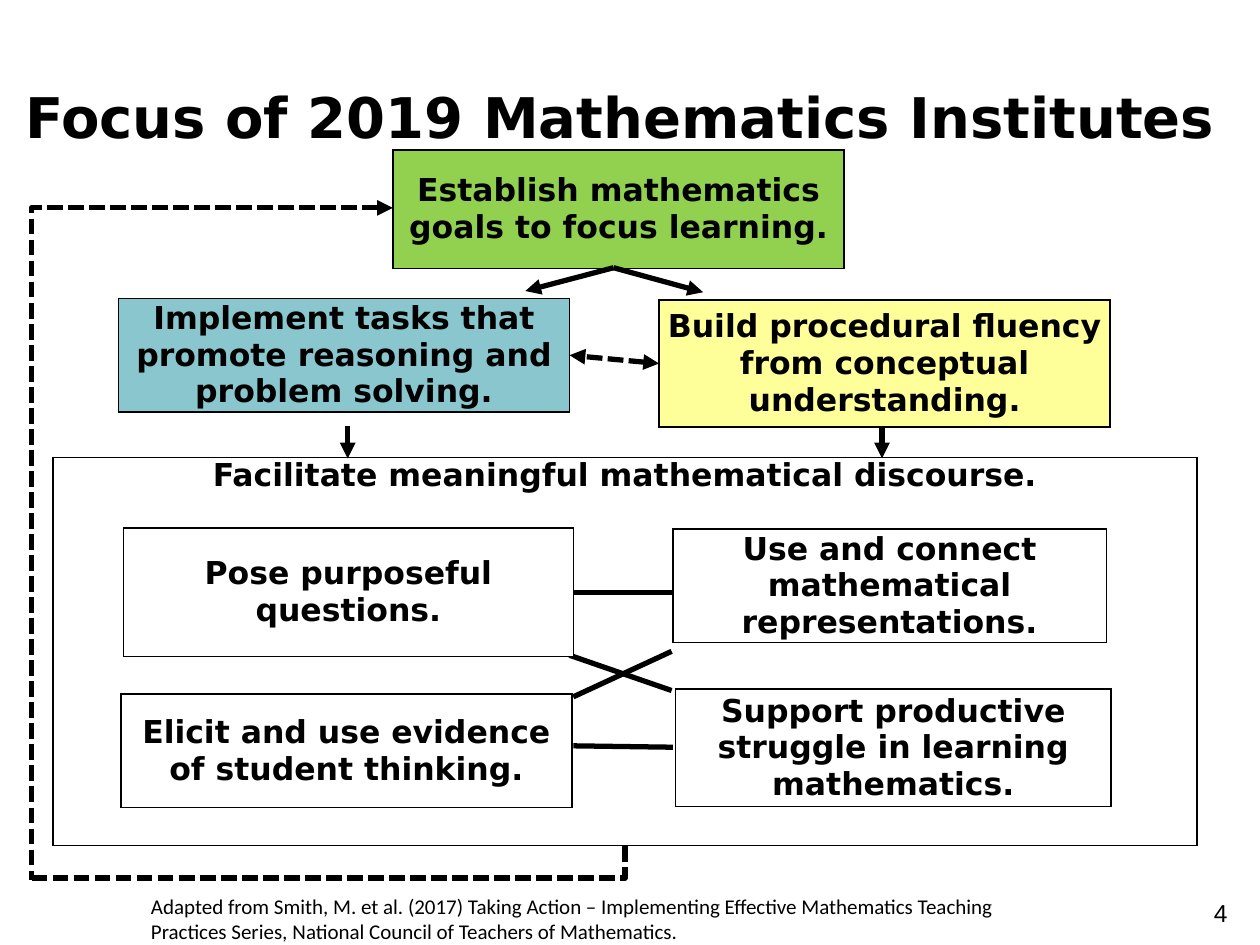
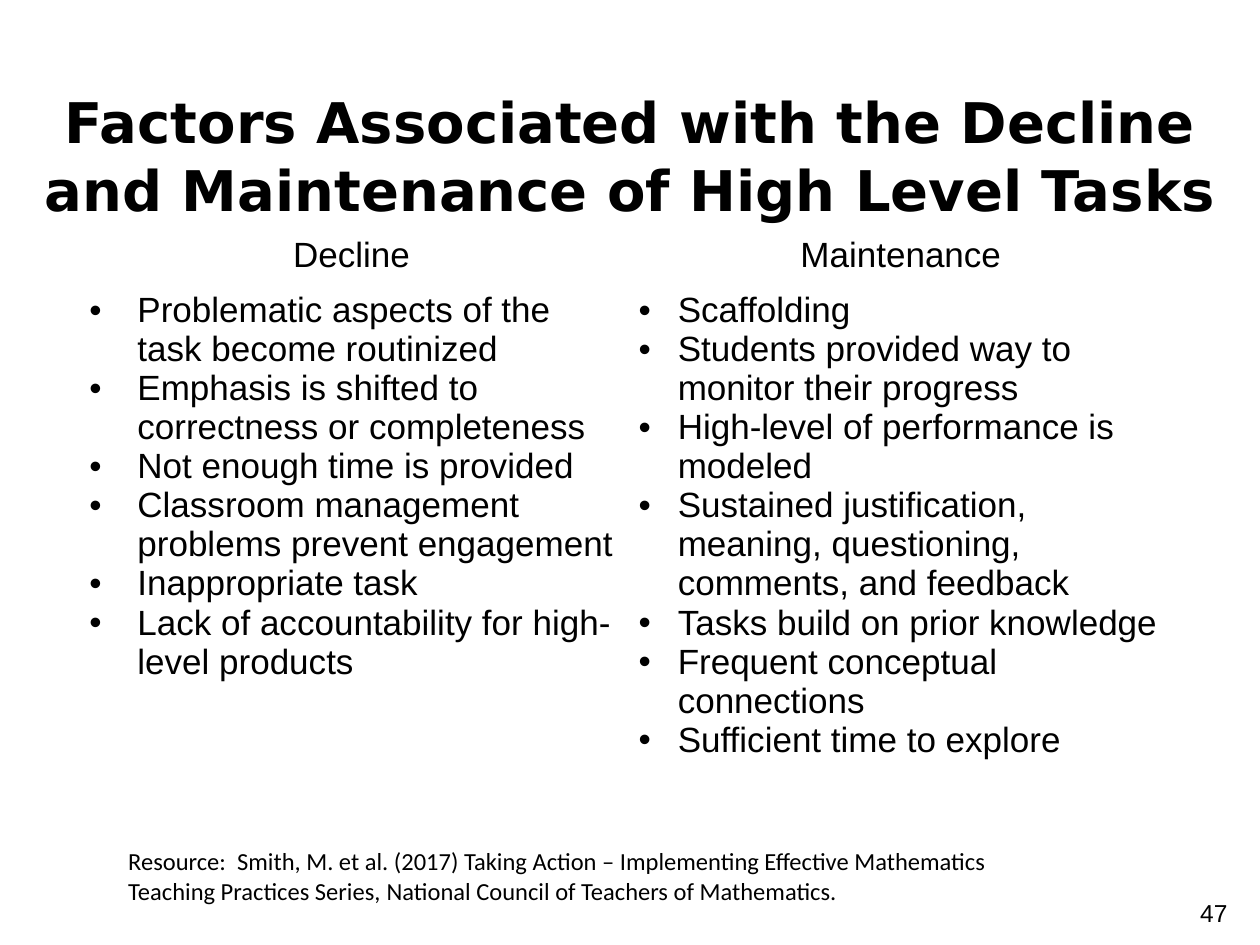
from lxml import etree
from pptx import Presentation
from pptx.dml.color import RGBColor
from pptx.enum.dml import MSO_LINE
from pptx.enum.shapes import MSO_CONNECTOR
from pptx.enum.text import MSO_ANCHOR, PP_ALIGN
from pptx.oxml.ns import qn
from pptx.util import Pt

STRAIGHT, ELBOW = MSO_CONNECTOR.STRAIGHT, MSO_CONNECTOR.ELBOW
LEFT, CENTER, RIGHT = PP_ALIGN.LEFT, PP_ALIGN.CENTER, PP_ALIGN.RIGHT
TOP, MIDDLE = MSO_ANCHOR.TOP, MSO_ANCHOR.MIDDLE
DASH = MSO_LINE.SQUARE_DOT

COLORS = {"ink": "000000", "goals": "92D050", "tasks": "8AC6CD",
          "fluency": "FFFF99", "practice": "FFFFFF"}
HEAD_FONT, BODY_FONT, NOTE_FONT = "DejaVu Sans", "Arial", "Calibri"
CITATION = ("Smith, M. et al. (2017) Taking Action – Implementing Effective "
            "Mathematics Teaching Practices Series", ", ",
            "National Council of Teachers of Mathematics.")


def rgb(name):
    return RGBColor.from_string(COLORS[name])


class SlideBuilder:
    """Holds the shared style and the slide being built."""

    def __init__(self):
        self.deck = Presentation()
        self.deck.slide_width, self.deck.slide_height = Pt(720), Pt(540)
        self.page = None

    def new_page(self, title, title_area, number):
        self.page = self.deck.slides.add_slide(self.deck.slide_layouts[6])
        self.text(title_area, [title], 32, HEAD_FONT, CENTER, MIDDLE, bold=True)
        self.text((540.5, 509.8, 168, 37.4), [number], 14, BODY_FONT, RIGHT)

    def format_para(self, para, size, font, align, bold=False):
        para.alignment = align
        for span in para.runs:
            span.font.size, span.font.name, span.font.bold = Pt(size), font, bold
            span.font.color.rgb = rgb("ink")

    def text(self, area, spans, size, font, align=LEFT, anchor=TOP, bold=False):
        box = self.page.shapes.add_textbox(*map(Pt, area))
        frame = box.text_frame
        frame.word_wrap, frame.vertical_anchor = True, anchor
        para = frame.paragraphs[0]
        for words in spans:
            para.add_run().text = words
        self.format_para(para, size, font, align, bold)
        return para

    def source_note(self, area, opening, size):
        para = self.text(area, [opening, *CITATION], size, NOTE_FONT)
        para.runs[2].font.italic = True

    def table(self, area, rows, columns):
        frame = self.page.shapes.add_table(rows, columns, *map(Pt, area))
        frame.table.first_row = frame.table.horz_banding = False
        return frame

    def style_cell(self, cell, fill=None, border=False):
        properties = cell._tc.get_or_add_tcPr()
        for side in ("lnL", "lnR", "lnT", "lnB"):
            edge = etree.SubElement(properties, qn("a:" + side), w=str(Pt(1)))
            if border:
                paint = etree.SubElement(edge, qn("a:solidFill"))
                etree.SubElement(paint, qn("a:srgbClr"), val=COLORS["ink"])
            else:
                etree.SubElement(edge, qn("a:noFill"))
        if fill:
            cell.fill.solid()
            cell.fill.fore_color.rgb = rgb(fill)
        else:
            cell.fill.background()

    def practice_box(self, area, words, fill=None, anchor=MIDDLE):
        frame = self.table(area, 1, 1)
        cell = frame.table.cell(0, 0)
        self.style_cell(cell, fill, border=True)
        cell.margin_left = cell.margin_right = Pt(4.5)
        cell.margin_top = cell.margin_bottom = 0
        cell.vertical_anchor = anchor
        cell.text_frame.text = words
        self.format_para(cell.text_frame.paragraphs[0], 18, HEAD_FONT, CENTER, True)
        return frame

    def line(self, start, end, kind=STRAIGHT, dashed=False, heads=()):
        link = self.page.shapes.add_connector(kind, *map(Pt, (*start, *end)))
        link.line.width = Pt(3)
        link.line.color.rgb = rgb("ink")
        if dashed:
            link.line.dash_style = DASH
        properties = link._element.spPr
        for head in heads:
            etree.SubElement(properties.find(qn("a:ln")), qn("a:" + head),
                             type="triangle")
        if kind == ELBOW:  # one corner: across first, then up or down
            properties.find(qn("a:prstGeom")).set("prst", "bentConnector2")
        etree.SubElement(properties, qn("a:effectLst"))
        return link

    def list_cell(self, cell, items, indent):
        self.style_cell(cell)
        frame = cell.text_frame
        frame.text = "\n".join(items)
        for para in frame.paragraphs:
            properties = para._p.get_or_add_pPr()
            properties.set("marL", str(Pt(indent)))
            properties.set("indent", str(-Pt(indent)))
            etree.SubElement(properties, qn("a:buFont"), typeface=BODY_FONT)
            etree.SubElement(properties, qn("a:buChar"), char="•")
            self.format_para(para, 20, BODY_FONT, LEFT)


def build_focus(builder):
    builder.new_page("Focus of 2019 Mathematics Institutes", (0, 36, 709, 61), "4")
    builder.source_note((79.2, 506.9, 540, 36), "Adapted from ", 12)

    # Goals, tasks and fluency
    builder.practice_box((224.6, 85.7, 257.8, 67.7),
                         "Establish mathematics goals to focus learning.", "goals")
    tasks = builder.practice_box(
        (67.7, 170.6, 257.8, 64.8),
        "Implement tasks that promote reasoning and problem solving.", "tasks")
    fluency = builder.practice_box(
        (376.6, 171.4, 257.8, 72.7),
        "Build procedural fluency from conceptual understanding.", "fluency")

    # Arrows between the levels
    for start, end in (((350.6, 153), (300.2, 166.3)), ((350.6, 153), (401.8, 167)),
                       ((198.7, 243.4), (198.7, 262)), ((504, 243.4), (504, 262))):
        builder.line(start, end, heads=["tailEnd"])
    exchange = builder.line((376.6, 207.7), (325.5, 203), dashed=True,
                            heads=["headEnd", "tailEnd"])
    exchange.begin_connect(fluency, 1)
    exchange.end_connect(tasks, 3)

    # Discourse panel with its linked practices
    builder.practice_box((30.2, 261.4, 653.8, 221.8),
                         "Facilitate meaningful mathematical discourse.", anchor=TOP)
    for start, end in (((327.6, 338.4), (384.5, 338.4)), ((327.6, 426.2), (384.5, 427)),
                       ((327.6, 398.2), (383.8, 372.2)), ((325.4, 374.4), (383.8, 394.6))):
        builder.line(start, end)
    for area, words in (
            ((384.5, 302.4, 247.7, 64.8), "Use and connect mathematical representations."),
            ((70.6, 301.7, 257, 73.4), "Pose purposeful questions."),
            ((69.1, 396.7, 257.8, 64.8), "Elicit and use evidence of student thinking."),
            ((385.9, 393.8, 249.1, 67), "Support productive struggle in learning mathematics.")):
        builder.practice_box(area, words, "practice")

    # Feedback loop from discourse back to goals
    builder.line((18, 501.8), (357.1, 483.1), ELBOW, dashed=True)
    builder.line((224.6, 118.8), (18, 502.6), ELBOW, dashed=True, heads=["headEnd"])


def build_factors(builder):
    builder.new_page("Factors Associated with the Decline and Maintenance of "
                     "High Level Tasks", (15.8, 52.6, 689, 72), "47")
    builder.source_note((66.2, 480.2, 540, 41), "Resource:  ", 14)

    # Two columns of factors
    table = builder.table((43.9, 131, 627.8, 353.5), 2, 2).table
    table.rows[0].height, table.rows[1].height = Pt(31.7), Pt(321.8)
    factors = (
        ("Decline", 27.4, ["Problematic aspects of the task become routinized",
                           "Emphasis is shifted to correctness or completeness",
                           "Not enough time is provided",
                           "Classroom management problems prevent engagement",
                           "Inappropriate task",
                           "Lack of accountability for high-level products"]),
        ("Maintenance", 22.3, ["Scaffolding",
                               "Students provided way to monitor their progress",
                               "High-level of performance is modeled",
                               "Sustained justification, meaning, questioning, "
                               "comments, and feedback",
                               "Tasks build on prior knowledge",
                               "Frequent conceptual connections",
                               "Sufficient time to explore"]))
    for column, (heading, indent, items) in enumerate(factors):
        cell = table.cell(0, column)
        builder.style_cell(cell)
        cell.text_frame.text = heading
        builder.format_para(cell.text_frame.paragraphs[0], 20, BODY_FONT, CENTER)
        builder.list_cell(table.cell(1, column), items, indent)


def main():
    builder = SlideBuilder()
    build_focus(builder)
    build_factors(builder)
    builder.deck.save("out.pptx")


if __name__ == "__main__":
    main()
